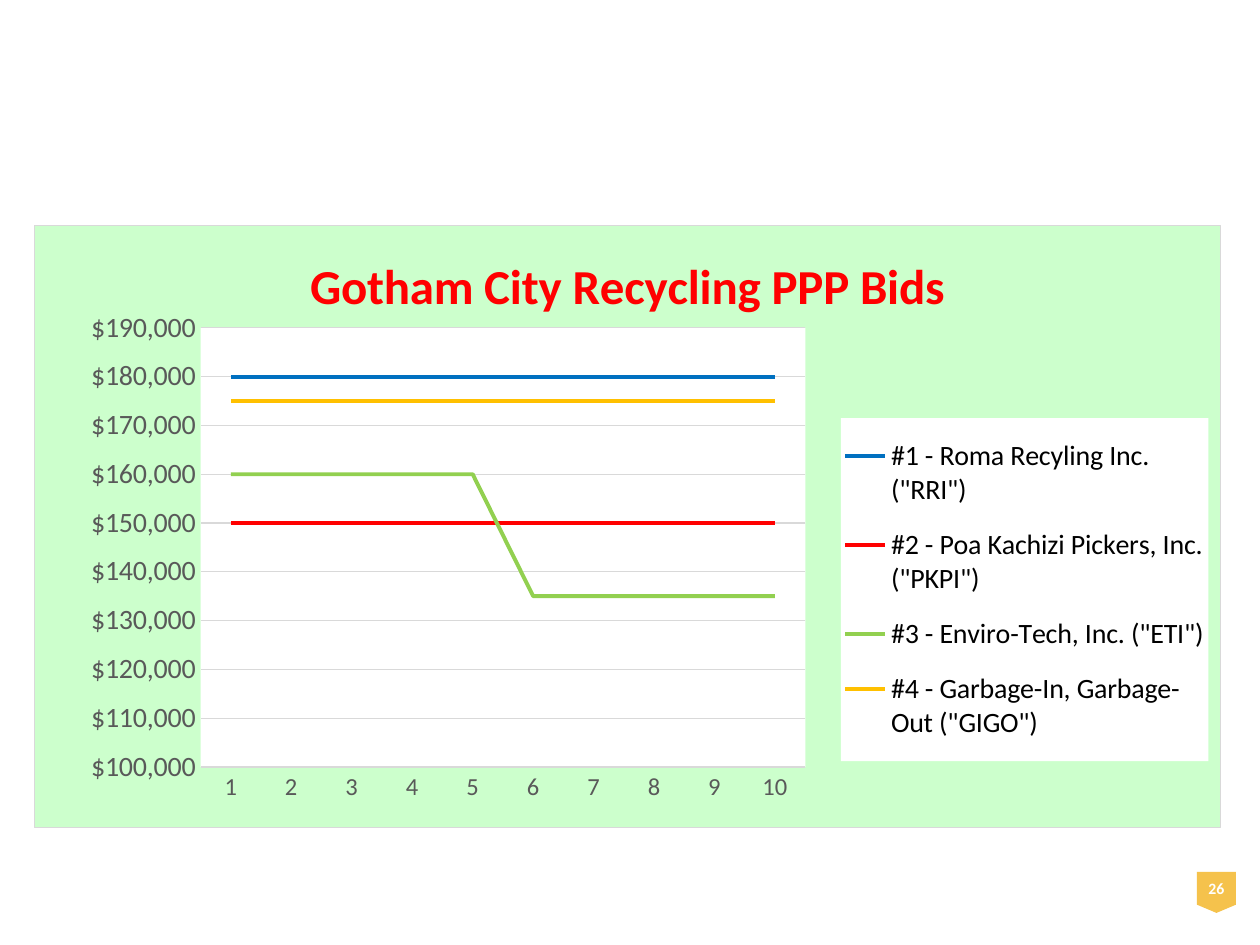
"""Build the slide with the line chart of the Gotham City recycling bids."""
import pptx
import pptx.chart.data
import pptx.dml.color
import pptx.enum.chart
import pptx.enum.shapes
import pptx.enum.text
import pptx.oxml
import pptx.oxml.ns
import pptx.util

PX = 7257
FONT = "Calibri"
GRAY = "D9D9D9"


def color(hex_string):
    return pptx.dml.color.RGBColor.from_string(hex_string)


def write_text(text_frame, text, size, ink, bold=False):
    paragraph = text_frame.paragraphs[0]
    paragraph.alignment = pptx.enum.text.PP_ALIGN.CENTER
    run = paragraph.add_run()
    run.text = text
    run.font.name = FONT
    run.font.size = pptx.util.Pt(size)
    run.font.bold = bold
    run.font.color.rgb = color(ink)


presentation = pptx.Presentation()
presentation.slide_width = 1260 * PX
presentation.slide_height = 945 * PX
slide = presentation.slides.add_slide(presentation.slide_layouts[6])

page_badge = slide.shapes.add_shape(
    pptx.enum.shapes.MSO_SHAPE.FLOWCHART_OFFPAGE_CONNECTOR,
    1197 * PX, 872 * PX, 39 * PX, 41 * PX)
page_badge.shadow.inherit = False
page_badge.fill.solid()
page_badge.fill.fore_color.rgb = color("F5C24C")
page_badge.line.fill.background()
badge_frame = page_badge.text_frame
badge_frame.margin_left = badge_frame.margin_right = 9 * PX
badge_frame.margin_top = badge_frame.margin_bottom = 5 * PX
badge_frame.vertical_anchor = pptx.enum.text.MSO_ANCHOR.MIDDLE
write_text(badge_frame, "26", size=9, ink="FFFFFF", bold=True)

bids = [
    ('#1 - Roma Recyling Inc. ("RRI")', [180000] * 10, "0070C0"),
    ('#2 - Poa Kachizi Pickers, Inc. ("PKPI")', [150000] * 10, "FF0000"),
    ('#3 - Enviro-Tech, Inc. ("ETI")', [160000] * 5 + [135000] * 5, "92D050"),
    ('#4 - Garbage-In, Garbage-Out ("GIGO")', [175000] * 10, "FFC000"),
]
chart_data = pptx.chart.data.CategoryChartData(number_format='"$"#,##0')
chart_data.categories = [str(year) for year in range(1, 11)]
for name, values, _ in bids:
    chart_data.add_series(name, values)
chart = slide.shapes.add_chart(
    pptx.enum.chart.XL_CHART_TYPE.LINE,
    34 * PX, 225 * PX, 1187 * PX, 603 * PX, chart_data).chart
chart.font.name = FONT
chart.font.size = pptx.util.Pt(10)
chart.font.color.rgb = color("000000")
chart.plots[0].vary_by_categories = False
chart.has_title = True
write_text(chart.chart_title.text_frame, "Gotham City Recycling PPP Bids",
           size=28, ink="FF0000", bold=True)

for series, (_, _, stroke) in zip(chart.plots[0].series, bids):
    series.smooth = False
    series.marker.style = pptx.enum.chart.XL_MARKER_STYLE.NONE
    series.format.line.width = pptx.util.Pt(2.25)
    series.format.line.color.rgb = color(stroke)

value_axis = chart.value_axis
value_axis.minimum_scale = 100000
value_axis.maximum_scale = 190000
value_axis.major_unit = 10000
value_axis.tick_labels.number_format = '"$"#,##0'
value_axis.tick_labels.number_format_is_linked = False
value_axis.format.line.fill.background()
for axis, size in ((chart.category_axis, 14), (value_axis, 16)):
    axis.major_tick_mark = pptx.enum.chart.XL_TICK_MARK.NONE
    axis.minor_tick_mark = pptx.enum.chart.XL_TICK_MARK.NONE
    axis.tick_labels.font.name = FONT
    axis.tick_labels.font.size = pptx.util.Pt(size)
    axis.tick_labels.font.color.rgb = color("595959")
for line in (chart.category_axis.format.line, value_axis.major_gridlines.format.line):
    line.width = pptx.util.Pt(0.75)
    line.color.rgb = color(GRAY)

chart.has_legend = True
legend = chart.legend
legend.position = pptx.enum.chart.XL_LEGEND_POSITION.RIGHT
legend.include_in_layout = False
legend.font.name = FONT
legend.font.size = pptx.util.Pt(16)
legend.font.color.rgb = color("000000")

chart_node = chart.element.find(pptx.oxml.ns.qn("c:chart"))
plot_area = chart_node.find(pptx.oxml.ns.qn("c:plotArea"))
legend_node = chart_node.find(pptx.oxml.ns.qn("c:legend"))
namespaces = pptx.oxml.ns.nsdecls("c", "a")

border = f'<a:solidFill><a:srgbClr val="{GRAY}"/></a:solidFill>'
surfaces = [
    (chart_node, "CCFFCC", border),
    (plot_area[-1], "FFFFFF", "<a:noFill/>"),
    (legend_node.find(pptx.oxml.ns.qn("c:overlay")), "FFFFFF", "<a:noFill/>"),
]
for predecessor, fill, outline in surfaces:
    predecessor.addnext(pptx.oxml.parse_xml(
        f'<c:spPr {namespaces}><a:solidFill><a:srgbClr val="{fill}"/></a:solidFill>'
        f'<a:ln w="9525">{outline}</a:ln></c:spPr>'))

layouts = [
    (plot_area, 0, '<c:layoutTarget val="inner"/>', (0.14, 0.17, 0.51, 0.73)),
    (legend_node, 1, "", (0.68, 0.32, 0.31, 0.57)),
]
for parent, index, target, (left, top, width, height) in layouts:
    for old_layout in parent.findall(pptx.oxml.ns.qn("c:layout")):
        parent.remove(old_layout)
    parent.insert(index, pptx.oxml.parse_xml(
        f'<c:layout {namespaces}><c:manualLayout>{target}'
        '<c:xMode val="edge"/><c:yMode val="edge"/>'
        f'<c:x val="{left}"/><c:y val="{top}"/><c:w val="{width}"/><c:h val="{height}"/>'
        '</c:manualLayout></c:layout>'))

presentation.save("out.pptx")
